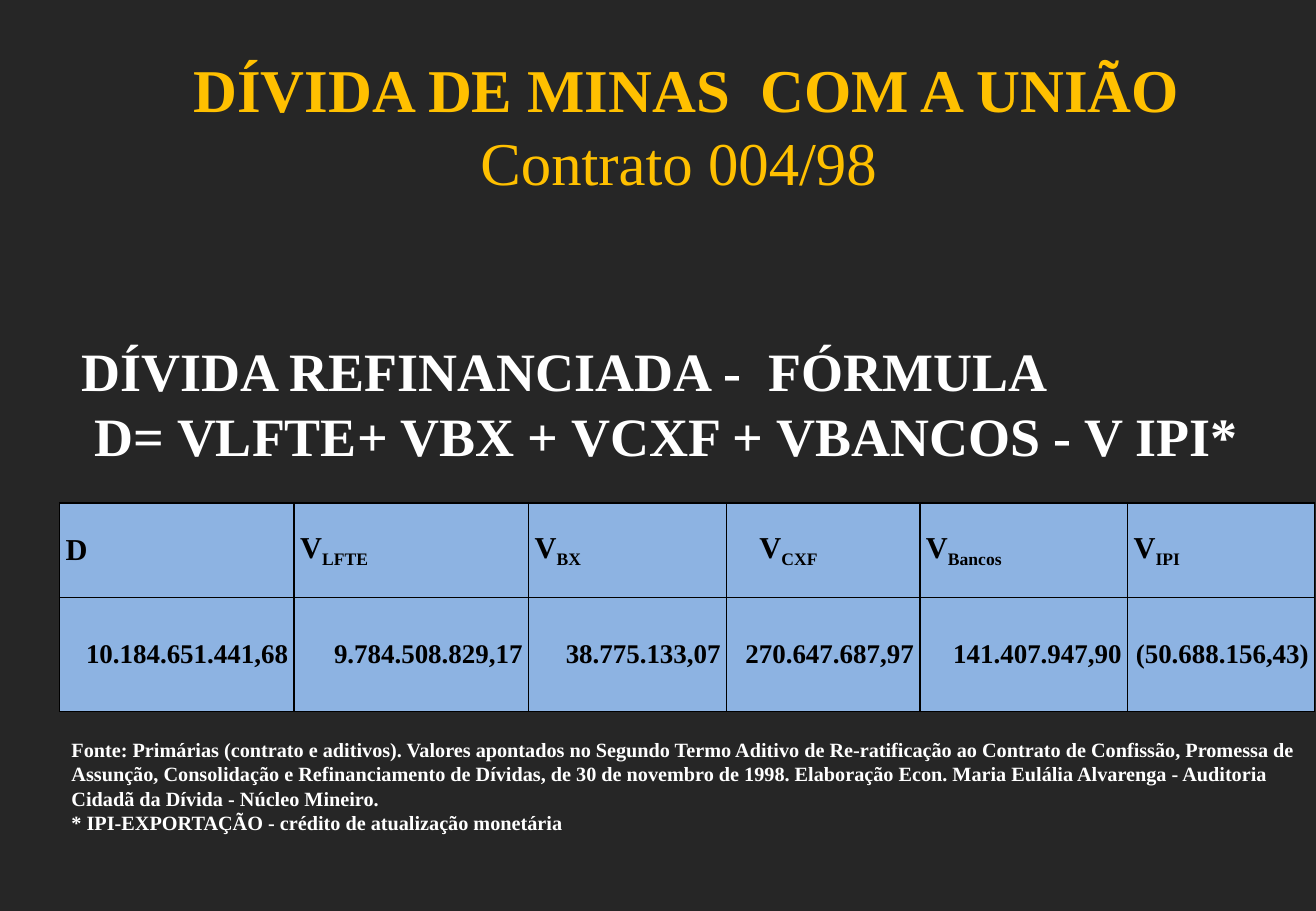
from pptx import Presentation
from pptx import util as u
from pptx.dml.color import RGBColor
from pptx.enum import shapes, text
from pptx.oxml import parse_xml
from pptx.oxml.ns import nsdecls

WHITE, BLACK, GOLD, BLUE, CHARCOAL = "FFFFFF", "000000", "FFC000", "8DB3E2", "262626"
LEFT, RIGHT, CENTER, JUSTIFY = (
    text.PP_ALIGN.LEFT, text.PP_ALIGN.RIGHT, text.PP_ALIGN.CENTER, text.PP_ALIGN.JUSTIFY)


def px(length):
    return u.Emu(length * 9144)


def color(value):
    return RGBColor.from_string(value)


class DebtSlide:
    """Hold the style and the current slide, and draw each kind of element."""

    font_name = "Times New Roman"

    def __init__(self, presentation):
        self.slide = presentation.slides.add_slide(presentation.slide_layouts[6])

    def backdrop(self, box, fill):
        shape = self.slide.shapes.add_shape(shapes.MSO_SHAPE.RECTANGLE, *map(px, box))
        shape.shadow.inherit = False
        shape.fill.solid()
        shape.fill.fore_color.rgb = color(fill)
        shape.line.color.rgb = color(BLACK)
        shape.line.width = u.Pt(1)

    def format(self, paragraph, size, fill, align, margin=0, indent=0):
        paragraph.alignment = align
        if margin or indent:
            properties = paragraph._p.get_or_add_pPr()
            properties.set("marL", str(px(margin)))
            properties.set("indent", str(px(indent)))
        for run in paragraph.runs:
            run.font.name = self.font_name
            run.font.size = u.Pt(size)
            run.font.bold = True
            run.font.color.rgb = color(fill)

    def text_box(self, box, lines, size, fill, align, anchor=text.MSO_ANCHOR.TOP, hanging=0):
        frame = self.slide.shapes.add_textbox(*map(px, box)).text_frame
        frame.word_wrap = True
        frame.vertical_anchor = anchor
        frame.text = "\n".join(lines)
        for paragraph in frame.paragraphs:
            self.format(paragraph, size, fill, align, hanging, -hanging)
        return frame

    def cell(self, cell, fill):
        cell.fill.solid()
        cell.fill.fore_color.rgb = color(fill)
        cell.vertical_anchor = text.MSO_ANCHOR.MIDDLE
        cell.margin_left = cell.margin_right = px(5)
        cell.margin_top = cell.margin_bottom = 0
        properties = cell._tc.get_or_add_tcPr()
        for position, side in enumerate(("lnL", "lnR", "lnT", "lnB")):
            properties.insert(position, parse_xml(
                f'<a:{side} {nsdecls("a")} w="12700"><a:solidFill>'
                f'<a:srgbClr val="{BLACK}"/></a:solidFill></a:{side}>'))

    def table(self, box, widths, heights, headers, values):
        table = self.slide.shapes.add_table(2, len(widths), *map(px, box)).table
        for row, height in zip(table.rows, heights):
            row.height = px(height)
        for index, (width, header, value) in enumerate(zip(widths, headers, values)):
            table.columns[index].width = px(width)
            symbol, subscript, indent = header
            top, bottom = table.cell(0, index), table.cell(1, index)
            paragraph = top.text_frame.paragraphs[0]
            paragraph.text = symbol
            if subscript:
                run = paragraph.add_run()
                run.text = subscript
                run.font._element.set("baseline", "-25000")
            self.format(paragraph, 18, BLACK, JUSTIFY, indent=indent)
            bottom.text_frame.text = value
            self.format(bottom.text_frame.paragraphs[0], 16, BLACK, RIGHT)
            self.cell(top, BLUE)
            self.cell(bottom, BLUE)


def main():
    presentation = Presentation()
    presentation.slide_width, presentation.slide_height = px(1083), px(750)
    slide = DebtSlide(presentation)
    slide.backdrop((-2, -7, 1120, 773), CHARCOAL)
    title = slide.text_box(
        (34, 37, 1049, 131), (" DÍVIDA DE MINAS  COM A UNIÃO", "Contrato 004/98"),
        36, GOLD, CENTER, text.MSO_ANCHOR.MIDDLE)
    title.paragraphs[1].runs[0].font.bold = False
    slide.text_box(
        (57, 273, 1026, 118),
        ("DÍVIDA REFINANCIADA -  FÓRMULA ", " D= VLFTE+ VBX + VCXF + VBANCOS - V IPI*"),
        32, WHITE, JUSTIFY, hanging=39)
    slide.text_box(
        (49, 602, 1034, 91),
        ("Fonte: Primárias (contrato e aditivos). Valores apontados no Segundo Termo Aditivo de "
         "Re-ratificação ao Contrato de Confissão, Promessa de Assunção, Consolidação e "
         "Refinanciamento de Dívidas, de 30 de novembro de 1998. Elaboração Econ. Maria Eulália "
         "Alvarenga - Auditoria Cidadã da Dívida - Núcleo Mineiro.",
         "* IPI-EXPORTAÇÃO - crédito de atualização monetária"),
        12, WHITE, LEFT)
    slide.table(
        (49, 414, 1034, 172), (193, 193, 163, 159, 171, 154), (78, 94),
        (("D", "", 0), ("V", "LFTE", 0), ("V", "BX", 0),
         ("V", "CXF", 22), ("V", "Bancos", 0), ("V", "IPI", 0)),
        ("10.184.651.441,68", "9.784.508.829,17", "38.775.133,07",
         "270.647.687,97", "141.407.947,90", "(50.688.156,43)"))
    presentation.save("out.pptx")


if __name__ == "__main__":
    main()
